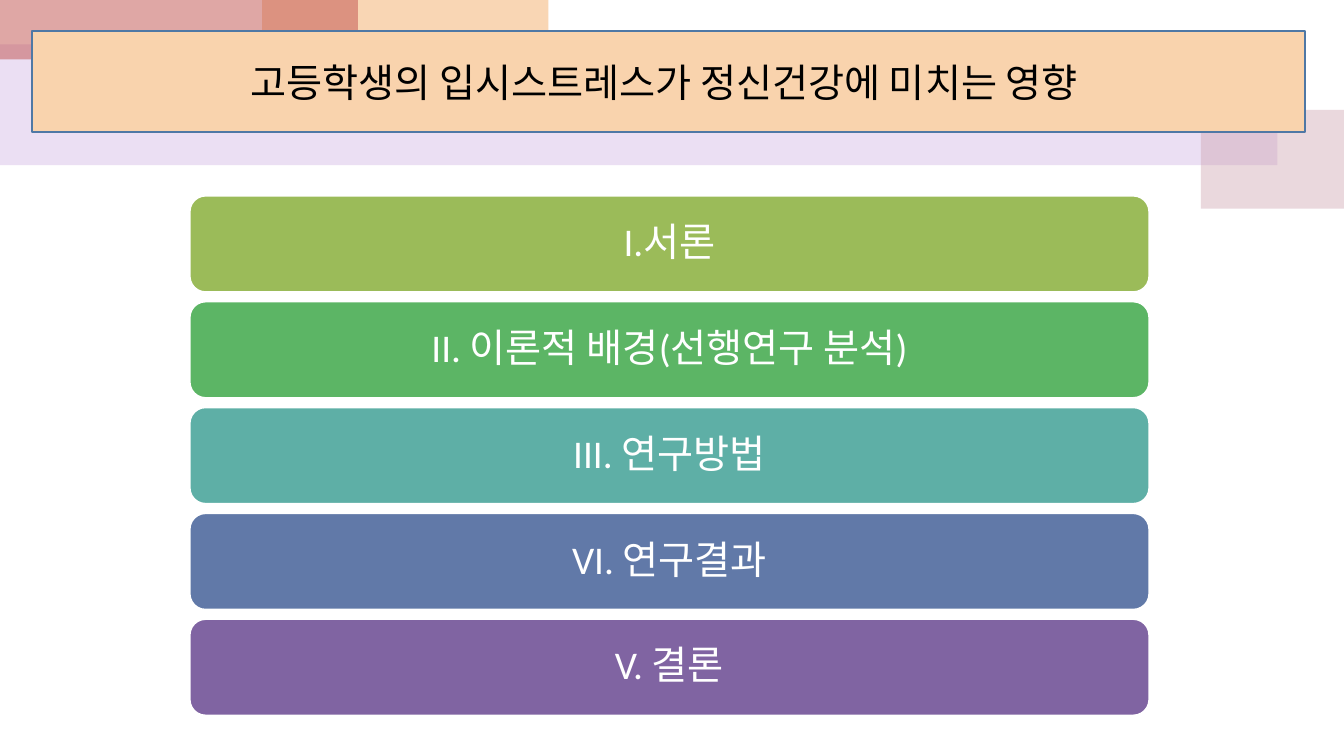
from dataclasses import dataclass

from pptx import Presentation
from pptx import util as u
from pptx.dml.color import RGBColor
from pptx.enum import shapes, text
from pptx.oxml.ns import qn
from lxml import etree

PX = 9144  # 100 px to the inch
FONT = "Calibri"
TEXT_SIZE = u.Pt(28)
LINE_WIDTH = u.Pt(1.5)

BLACK = RGBColor(0x00, 0x00, 0x00)
WHITE = RGBColor(0xFF, 0xFF, 0xFF)
LILAC = RGBColor(0xBF, 0x98, 0xD8)
ROSE = RGBColor(0xCC, 0x9E, 0xAC)
APRICOT = RGBColor(0xF5, 0xBC, 0x83)
RED = RGBColor(0xC0, 0x50, 0x4D)
PEACH = RGBColor(0xF9, 0xD3, 0xAD)
STEEL = RGBColor(0x4F, 0x78, 0xA5)
OLIVE = RGBColor(0x9B, 0xBB, 0x59)
GREEN = RGBColor(0x5C, 0xB5, 0x65)
TEAL = RGBColor(0x5E, 0xAF, 0xA6)
BLUE = RGBColor(0x61, 0x79, 0xA8)
PURPLE = RGBColor(0x80, 0x64, 0xA2)


@dataclass(frozen=True)
class Band:
    left: int
    top: int
    width: int
    height: int
    color: RGBColor
    opacity: int  # per cent


@dataclass(frozen=True)
class Chapter:
    label: str
    color: RGBColor


BANDS = [
    Band(0, 44, 1267, 120, LILAC, 30),
    Band(1191, 109, 142, 98, ROSE, 40),
    Band(260, 0, 284, 59, APRICOT, 60),
    Band(0, 0, 355, 59, RED, 50),
]
CHAPTERS = [
    Chapter("I.서론", OLIVE),
    Chapter("II. 이론적 배경(선행연구 분석)", GREEN),
    Chapter("III. 연구방법", TEAL),
    Chapter("VI. 연구결과", BLUE),
    Chapter("V. 결론", PURPLE),
]
BAR_LEFT, BAR_TOP, BAR_WIDTH, BAR_HEIGHT, BAR_STEP = 188, 194, 952, 96, 105
BAR_INSET = 17


def px(length: int) -> u.Emu:
    return u.Emu(length * PX)


def set_text(box, words: str, color: RGBColor) -> None:
    frame = box.text_frame
    frame.text = words
    frame.word_wrap = True
    frame.auto_size = text.MSO_AUTO_SIZE.NONE
    frame.vertical_anchor = text.MSO_ANCHOR.MIDDLE
    para = frame.paragraphs[0]
    para.alignment = text.PP_ALIGN.CENTER
    font = para.runs[0].font
    font.name, font.size, font.color.rgb = FONT, TEXT_SIZE, color


def set_outline(box, color: RGBColor) -> None:
    box.line.color.rgb = color
    box.line.width = LINE_WIDTH


def add_band(page, band: Band) -> None:
    box = page.shapes.add_shape(
        shapes.MSO_SHAPE.RECTANGLE,
        px(band.left), px(band.top), px(band.width), px(band.height))
    box.shadow.inherit = False
    box.fill.solid()
    box.fill.fore_color.rgb = band.color
    box.line.fill.background()
    color = box.element.spPr.find(qn("a:solidFill"))[0]
    etree.SubElement(color, qn("a:alpha"), val=str(band.opacity * 1000))


def add_title(page, words: str) -> None:
    box = page.shapes.title
    box.left, box.top, box.width, box.height = px(32), px(31), px(1262), px(100)
    box.fill.solid()
    box.fill.fore_color.rgb = PEACH
    set_outline(box, STEEL)
    set_text(box, words, BLACK)
    # Bring the title in front of the bands
    box.element.getparent().append(box.element)


def add_chapter(page, index: int, chapter: Chapter) -> None:
    box = page.shapes.add_shape(
        shapes.MSO_SHAPE.ROUNDED_RECTANGLE,
        px(BAR_LEFT), px(BAR_TOP + index * BAR_STEP), px(BAR_WIDTH), px(BAR_HEIGHT))
    box.shadow.inherit = False
    box.fill.solid()
    box.fill.fore_color.rgb = chapter.color
    set_outline(box, WHITE)
    set_text(box, chapter.label, WHITE)
    frame = box.text_frame
    frame.margin_left = frame.margin_right = px(BAR_INSET)
    frame.margin_top = frame.margin_bottom = px(BAR_INSET)
    frame.paragraphs[0].line_spacing = 0.9


def main() -> None:
    deck = Presentation()
    deck.slide_width, deck.slide_height = px(1333), px(750)
    page = deck.slides.add_slide(deck.slide_layouts.get_by_name("Title Only"))

    # Background bands
    for band in BANDS:
        add_band(page, band)

    # Title and contents
    add_title(page, "고등학생의 입시스트레스가 정신건강에 미치는 영향 ")
    for index, chapter in enumerate(CHAPTERS):
        add_chapter(page, index, chapter)

    deck.save("out.pptx")


if __name__ == "__main__":
    main()
